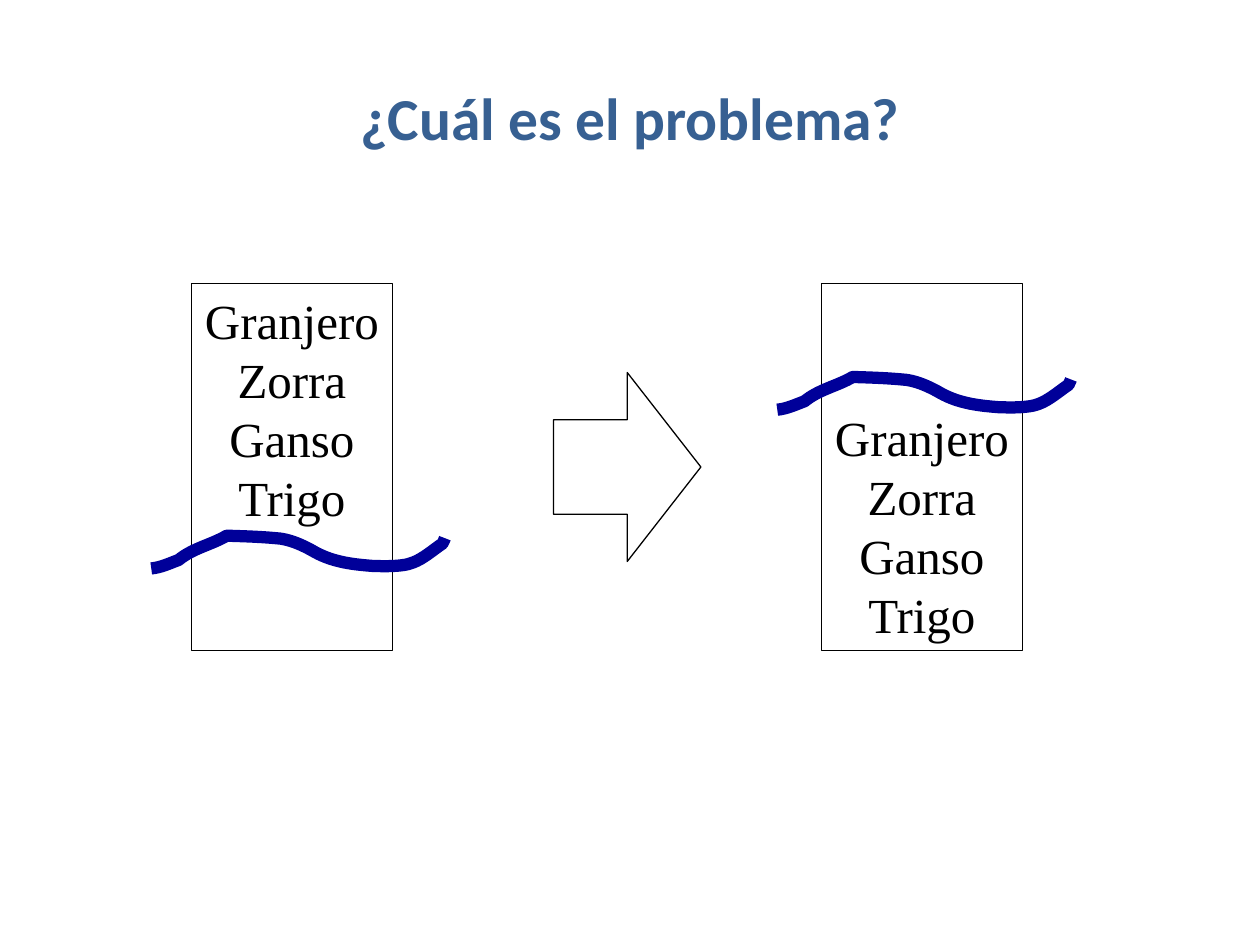
from lxml import etree
from pptx import Presentation
from pptx import util as u
from pptx.dml.color import RGBColor
from pptx.enum import shapes, text
from pptx.oxml.ns import qn

ITEMS = ["Granjero", "Zorra", "Ganso", "Trigo"]
BOX_SIZE = (4.05, 7.39)
RIVER_START = (0, 0.66)
# Each curve: two control points and an end point, in cm from the river's corner.
RIVER_CURVES = [
    ((0.2, 0.64), (0.36, 0.56), (0.55, 0.49)),
    ((0.84, 0.25), (1.22, 0.18), (1.52, 0)),
    ((1.85, 0.01), (2.18, 0.02), (2.51, 0.05)),
    ((2.77, 0.06), (3.06, 0.19), (3.3, 0.33)),
    ((3.68, 0.54), (4.09, 0.58), (4.47, 0.61)),
    ((4.57, 0.61), (5.05, 0.64), (5.28, 0.54)),
    ((5.49, 0.46), (5.69, 0.28), (5.87, 0.16)),
    ((5.89, 0.13), (5.92, 0.05), (5.92, 0.05)),
]


def color(hex_value):
    return RGBColor.from_string(hex_value)


def style_outline(shape, hex_value, width):
    shape.shadow.inherit = False
    shape.fill.background()
    shape.line.color.rgb = color(hex_value)
    shape.line.width = u.Pt(width)


def format_paragraph(paragraph, font_name, size, hex_value, bold=False):
    paragraph.alignment = text.PP_ALIGN.CENTER
    paragraph.font.name = font_name
    paragraph.font.size = u.Pt(size)
    paragraph.font.bold = bold
    paragraph.font.color.rgb = color(hex_value)


def add_title(slide, left, top, width, height):
    box = slide.shapes.add_textbox(u.Cm(left), u.Cm(top), u.Cm(width), u.Cm(height))
    frame = box.text_frame
    frame.word_wrap = True
    frame.vertical_anchor = text.MSO_ANCHOR.MIDDLE
    frame.text = "¿Cuál es el problema?"
    format_paragraph(frame.paragraphs[0], "Calibri", 34, "376092", bold=True)


def bend_segments(freeform, curves):
    """Turn each straight segment of the freeform into a Bézier curve."""
    segments = list(freeform._element.iter(qn("a:lnTo")))
    for segment, curve in zip(segments, curves):
        bezier = etree.Element(qn("a:cubicBezTo"))
        for x, y in curve:
            etree.SubElement(bezier, qn("a:pt"), x=str(u.Cm(x)), y=str(u.Cm(y)))
        segment.getparent().replace(segment, bezier)


def add_river(slide, left, top):
    ends = [RIVER_START] + [curve[-1] for curve in RIVER_CURVES]
    points = [(u.Cm(left + x), u.Cm(top + y)) for x, y in ends]
    builder = slide.shapes.build_freeform(*points[0])
    builder.add_line_segments(points[1:], close=False)
    river = builder.convert_to_shape()
    bend_segments(river, RIVER_CURVES)
    style_outline(river, "000099", 7)


def add_bank_state(slide, left, top, text_bottom, river_offset):
    """Draw a box of items; text_bottom is the space under the last item."""
    width, height = BOX_SIZE
    box = slide.shapes.add_shape(
        shapes.MSO_SHAPE.RECTANGLE, u.Cm(left), u.Cm(top), u.Cm(width), u.Cm(height))
    style_outline(box, "000000", 0.75)
    frame = box.text_frame
    frame.word_wrap = False
    frame.vertical_anchor = text.MSO_ANCHOR.BOTTOM
    frame.margin_bottom = u.Cm(text_bottom)
    frame.text = "\n".join(ITEMS)
    for paragraph in frame.paragraphs:
        format_paragraph(paragraph, "Times New Roman", 28, "000000")
    river_x, river_y = river_offset
    add_river(slide, left + river_x, top + river_y)


def add_arrow(slide, left, top, width, height):
    arrow = slide.shapes.add_shape(
        shapes.MSO_SHAPE.RIGHT_ARROW, u.Cm(left), u.Cm(top), u.Cm(width), u.Cm(height))
    style_outline(arrow, "000000", 0.75)


def main():
    presentation = Presentation()
    presentation.slide_width = u.Cm(25.4)
    presentation.slide_height = u.Cm(19.05)
    slide = presentation.slides.add_slide(presentation.slide_layouts[6])
    add_title(slide, 1.27, 0.76, 22.86, 3.18)
    add_bank_state(slide, 3.86, 5.72, 2.5, (-0.81, 5.08))
    add_bank_state(slide, 16.56, 5.72, 0.15, (-0.89, 1.88))
    add_arrow(slide, 11.16, 7.51, 2.97, 3.81)
    presentation.save("out.pptx")


if __name__ == "__main__":
    main()
